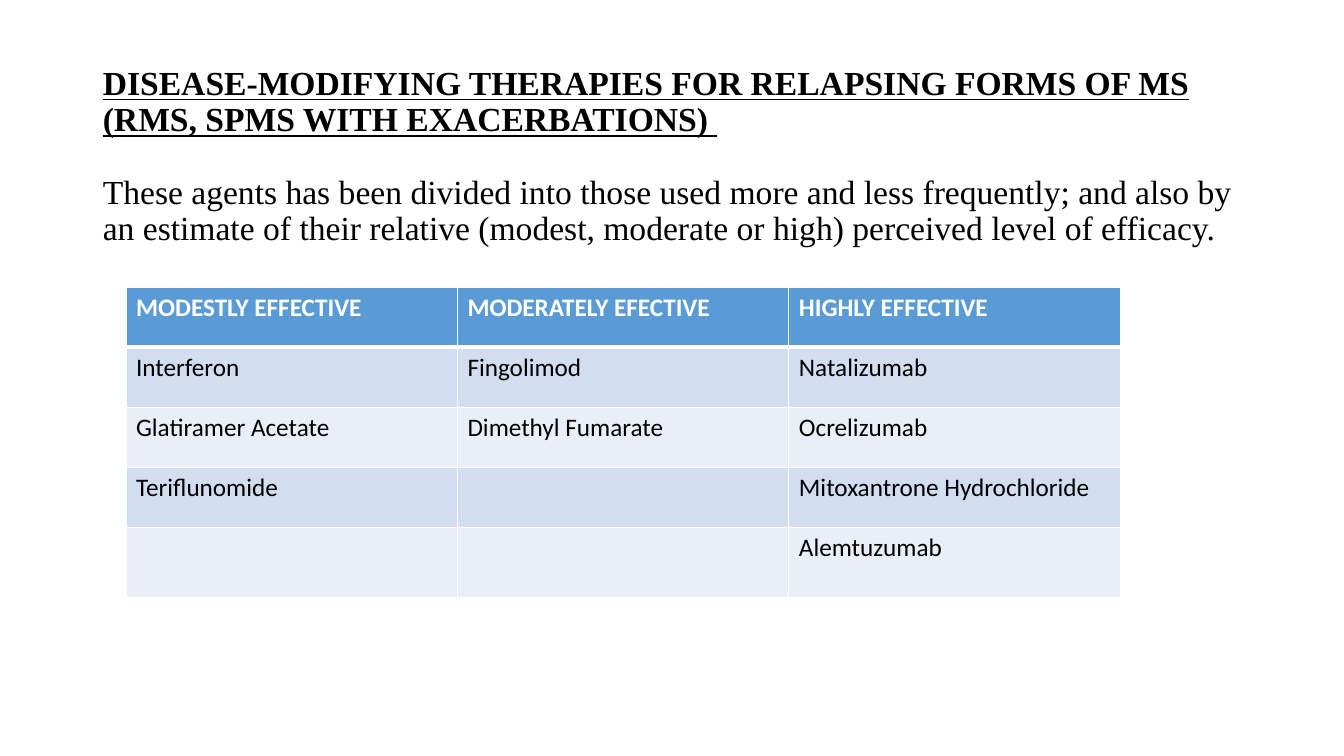
"""Build a slide on disease-modifying therapies for relapsing forms of MS."""
from dataclasses import dataclass

from lxml.etree import fromstring
from pptx import Presentation
from pptx.dml.color import RGBColor
from pptx.enum.text import MSO_ANCHOR, MSO_AUTO_SIZE, PP_ALIGN
from pptx.util import Pt

HEADING = "DISEASE-MODIFYING THERAPIES FOR RELAPSING FORMS OF MS (RMS, SPMS WITH EXACERBATIONS) "
EXPLANATION = (
    "These agents has been divided into those used more and less frequently; and also by "
    "an estimate of their relative (modest, moderate or high) perceived level of efficacy."
)
THERAPIES = {
    "MODESTLY EFFECTIVE": ["Interferon", "Glatiramer Acetate", "Teriflunomide"],
    "MODERATELY EFECTIVE": ["Fingolimod", "Dimethyl Fumarate"],
    "HIGHLY EFFECTIVE": [
        "Natalizumab", "Ocrelizumab", "Mitoxantrone Hydrochloride", "Alemtuzumab",
    ],
}


@dataclass(frozen=True)
class Theme:
    """Colours, fonts and type sizes of the slide."""
    ink: str = "000000"
    paper: str = "FFFFFF"
    header: str = "5B9BD5"
    bands: tuple = ("D2DEEF", "EAEFF7")
    title_font: str = "Times New Roman"
    table_font: str = "Calibri"
    title_size: int = 24
    table_size: int = 18
    rule: int = 1
    header_rule: int = 3


THEME = Theme()
SLIDE_WIDTH, SLIDE_HEIGHT = 960, 540
TITLE_BOX = (66.24, 44, 828, 136)
TABLE_LEFT, TABLE_TOP = 90, 205.2
COLUMN_WIDTH, ROW_HEIGHT, LAST_ROW_HEIGHT = 236.75, 42.86, 50.4
DRAWING_NS = "http://schemas.openxmlformats.org/drawingml/2006/main"


def add_run(paragraph, text, font, size, color, bold=False, underline=False):
    """Append one formatted run."""
    run = paragraph.add_run()
    run.text = text
    run.font.name = font
    run.font.size = Pt(size)
    run.font.bold = bold
    run.font.underline = underline
    run.font.color.rgb = RGBColor.from_string(color)


def set_borders(cell, top, bottom):
    """Draw the four white rules of a cell."""
    properties = cell._tc.get_or_add_tcPr()
    widths = {"L": THEME.rule, "R": THEME.rule, "T": top, "B": bottom}
    for position, (side, width) in enumerate(widths.items()):
        properties.insert(position, fromstring(
            f'<a:ln{side} xmlns:a="{DRAWING_NS}" w="{Pt(width)}"><a:solidFill>'
            f'<a:srgbClr val="{THEME.paper}"/></a:solidFill></a:ln{side}>'
        ))


def add_title(slide):
    """Fill the title with the heading and its explanation."""
    title = slide.shapes.title
    title.left, title.top, title.width, title.height = map(Pt, TITLE_BOX)
    frame = title.text_frame
    frame.word_wrap = True
    frame.auto_size = MSO_AUTO_SIZE.NONE
    frame.vertical_anchor = MSO_ANCHOR.TOP
    heading, explanation = frame.paragraphs[0], frame.add_paragraph()
    for paragraph, text, strong in (
        (heading, HEADING, True), (explanation, EXPLANATION, False),
    ):
        paragraph.alignment = PP_ALIGN.LEFT
        paragraph.line_spacing = 0.9
        paragraph.space_before = Pt(0 if strong else 26)
        add_run(paragraph, text, THEME.title_font, THEME.title_size, THEME.ink, strong, strong)


def add_therapies(slide):
    """Add the table with one column for each level of efficacy."""
    row_count = 1 + max(map(len, THERAPIES.values()))
    heights = [ROW_HEIGHT] * (row_count - 1) + [LAST_ROW_HEIGHT]
    table = slide.shapes.add_table(
        row_count, len(THERAPIES), Pt(TABLE_LEFT), Pt(TABLE_TOP),
        Pt(COLUMN_WIDTH * len(THERAPIES)), Pt(sum(heights)),
    ).table
    for row, height in zip(table.rows, heights):
        row.height = Pt(height)
    for column_index, (level, agents) in enumerate(THERAPIES.items()):
        table.columns[column_index].width = Pt(COLUMN_WIDTH)
        entries = [level, *agents]
        for row_index in range(row_count):
            cell = table.cell(row_index, column_index)
            is_header = row_index == 0
            fill = THEME.header if is_header else THEME.bands[(row_index - 1) % 2]
            cell.fill.solid()
            cell.fill.fore_color.rgb = RGBColor.from_string(fill)
            set_borders(
                cell,
                THEME.header_rule if row_index == 1 else THEME.rule,
                THEME.header_rule if is_header else THEME.rule,
            )
            if row_index < len(entries):
                add_run(
                    cell.text_frame.paragraphs[0], entries[row_index],
                    THEME.table_font, THEME.table_size,
                    THEME.paper if is_header else THEME.ink, is_header,
                )


def main():
    """Create and save the presentation."""
    presentation = Presentation()
    presentation.slide_width, presentation.slide_height = Pt(SLIDE_WIDTH), Pt(SLIDE_HEIGHT)
    slide = presentation.slides.add_slide(presentation.slide_layouts[5])
    add_title(slide)
    add_therapies(slide)
    presentation.save("out.pptx")


if __name__ == "__main__":
    main()
